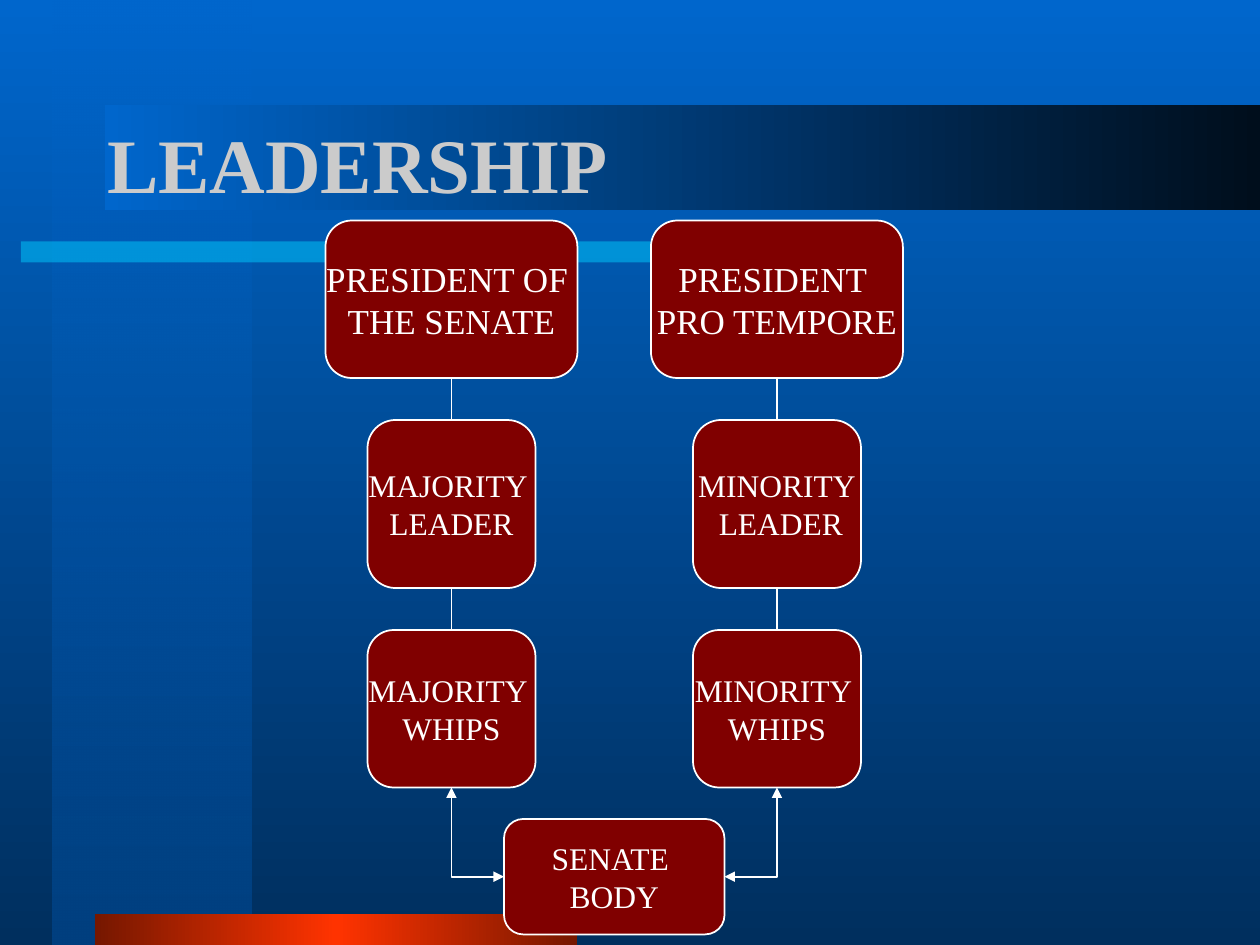
import pptx
import pptx.dml.color
import pptx.enum.shapes
import pptx.enum.text
import pptx.oxml
import pptx.oxml.ns
import pptx.util
from lxml import etree

COLORS = {
    "blue": "0066CC",
    "background_end": "002F5E",
    "column_end": "004080",
    "band_end": "000E1C",
    "cyan": "00CCFF",
    "red": "FF3300",
    "dark_red": "751700",
    "maroon": "800000",
    "white": "FFFFFF",
    "silver": "CBCBCB",
}
FONT = "Times New Roman"
TOP, LEFT, BOTTOM, RIGHT = range(4)
Pt = pptx.util.Pt
qn = pptx.oxml.ns.qn


def rgb(name):
    return pptx.dml.color.RGBColor.from_string(COLORS[name])


def write_text(frame, text, size=18, color="white", bold=False, align="CENTER", wrap=False):
    frame.text = text
    frame.word_wrap = wrap
    frame.vertical_anchor = pptx.enum.text.MSO_ANCHOR.MIDDLE
    for paragraph in frame.paragraphs:
        paragraph.alignment = getattr(pptx.enum.text.PP_ALIGN, align)
        for run in paragraph.runs:
            run.font.name = FONT
            run.font.size = Pt(size)
            run.font.bold = bold
            run.font.color.rgb = rgb(color)


def set_gradient(fill, element, stops, angle):
    fill.gradient()
    fill.gradient_angle = angle
    stop_list = next(element.iter(qn("a:gsLst")))
    for stop in list(stop_list):
        stop_list.remove(stop)
    for position, color, opacity in stops:
        stop = etree.SubElement(stop_list, qn("a:gs"), pos=str(position * 1000))
        value = etree.SubElement(stop, qn("a:srgbClr"), val=COLORS[color])
        if opacity < 100:
            etree.SubElement(value, qn("a:alpha"), val=str(opacity * 1000))


class SlideBuilder:
    def __init__(self, slide):
        self.slide = slide
        self.line_color = "white"
        self.line_width = 1

    def background(self, stops):
        set_gradient(self.slide.background.fill, self.slide._element, stops, 270)

    def shape(self, kind, left, top, width, height):
        shape = self.slide.shapes.add_shape(kind, Pt(left), Pt(top), Pt(width), Pt(height))
        shape.shadow.inherit = False
        return shape

    def bar(self, left, top, width, height, stops, angle=0):
        shape = self.shape(pptx.enum.shapes.MSO_SHAPE.RECTANGLE, left, top, width, height)
        shape.line.fill.background()
        set_gradient(shape.fill, shape._element, stops, angle)

    def title(self, text, left, top, width, height):
        title = self.slide.shapes.title
        title.left, title.top, title.width, title.height = map(Pt, (left, top, width, height))
        write_text(title.text_frame, text, size=44, color="silver", bold=True, align="LEFT", wrap=True)
        title._element.getparent().append(title._element)

    def box(self, text, center, top, width, height, size=18):
        kind = pptx.enum.shapes.MSO_SHAPE.ROUNDED_RECTANGLE
        shape = self.shape(kind, center - width / 2, top, width, height)
        shape.fill.solid()
        shape.fill.fore_color.rgb = rgb("maroon")
        shape.line.color.rgb = rgb(self.line_color)
        shape.line.width = Pt(self.line_width)
        write_text(shape.text_frame, text, size=size)
        return shape

    def connect(self, first, first_side, second, second_side, elbow=False):
        kinds = pptx.enum.shapes.MSO_CONNECTOR
        kind = kinds.ELBOW if elbow else kinds.STRAIGHT
        connector = self.slide.shapes.add_connector(kind, 0, 0, 0, 0)
        connector.begin_connect(first, first_side)
        connector.end_connect(second, second_side)
        connector.line.color.rgb = rgb(self.line_color)
        connector.line.width = Pt(self.line_width)
        properties = connector._element.spPr
        if elbow:
            properties.find(qn("a:prstGeom")).set("prst", "bentConnector2")
            line = properties.find(qn("a:ln"))
            for end in ("a:headEnd", "a:tailEnd"):
                etree.SubElement(line, qn(end), type="triangle", w="med", len="med")
        etree.SubElement(properties, qn("a:effectLst"))


def main():
    presentation = pptx.Presentation()
    presentation.slide_width = Pt(720)
    presentation.slide_height = Pt(540)
    builder = SlideBuilder(presentation.slides.add_slide(presentation.slide_layouts[5]))

    builder.background([(0, "blue", 100), (100, "background_end", 100)])
    builder.bar(30, 0, 114, 540, [(0, "blue", 50), (100, "column_end", 100)], angle=270)
    builder.bar(12, 138, 372, 12, [(0, "cyan", 50), (100, "cyan", 50)])
    builder.bar(54, 522, 276, 18, [(0, "dark_red", 100), (50, "red", 100), (100, "dark_red", 100)])
    builder.bar(60, 60, 660, 60, [(0, "blue", 100), (100, "band_end", 100)])
    builder.title("LEADERSHIP", 54, 48, 612, 90)

    columns = [
        (258, "PRESIDENT OF \nTHE SENATE", "MAJORITY \nLEADER", "MAJORITY \nWHIPS", LEFT),
        (444, "PRESIDENT \nPRO TEMPORE", "MINORITY\n LEADER", "MINORITY \nWHIPS", RIGHT),
    ]
    body = builder.box("SENATE \nBODY", 351, 468, 126, 66)
    for center, president_text, leader_text, whips_text, body_side in columns:
        president = builder.box(president_text, center, 126, 144, 90, size=20)
        leader = builder.box(leader_text, center, 240, 96, 96)
        whips = builder.box(whips_text, center, 360, 96, 90)
        builder.connect(president, BOTTOM, leader, TOP)
        builder.connect(leader, BOTTOM, whips, TOP)
        builder.connect(body, body_side, whips, BOTTOM, elbow=True)

    presentation.save("out.pptx")


if __name__ == "__main__":
    main()
